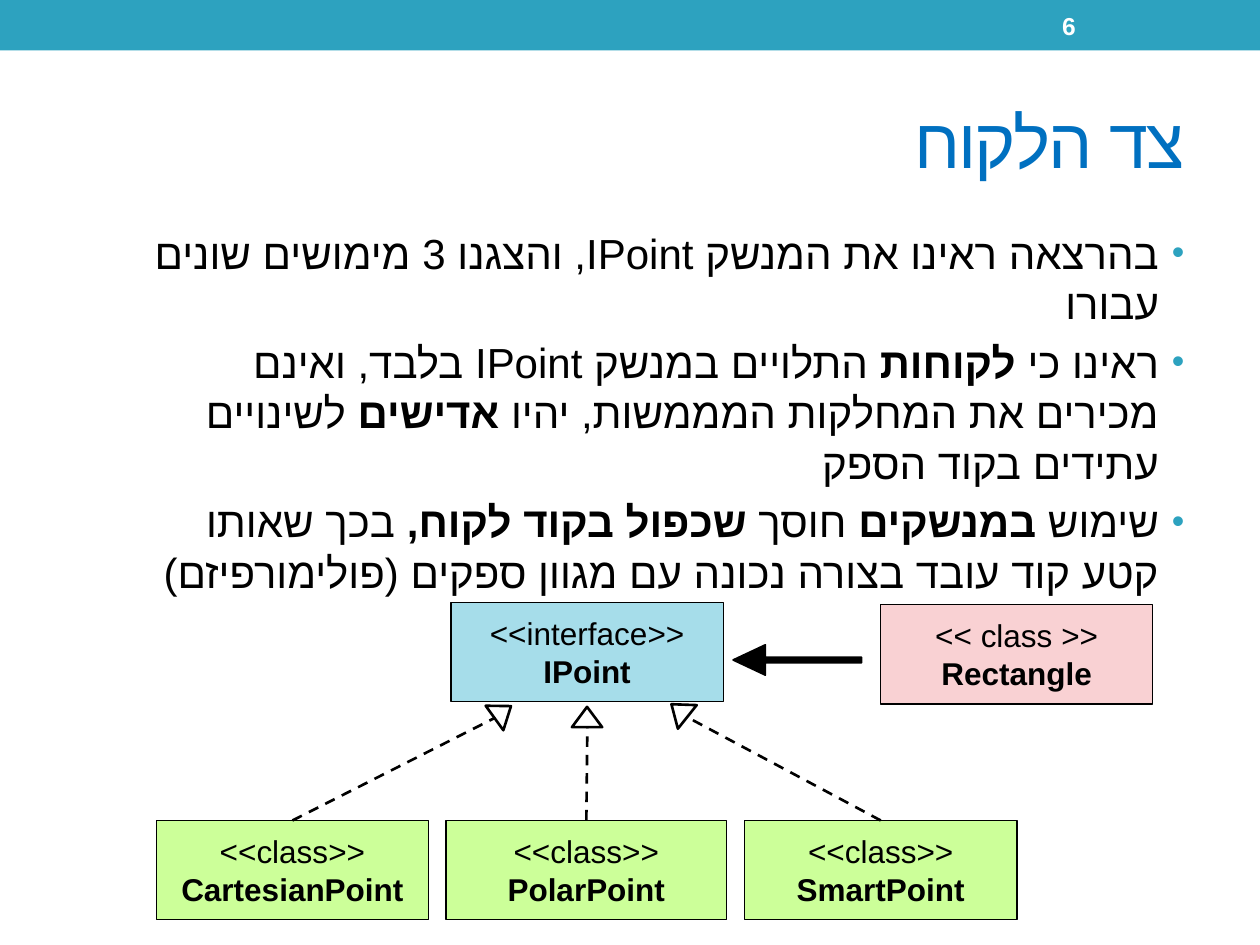
import pptx
import pptx.util
import pptx.dml.color
import pptx.enum.dml
import pptx.enum.shapes
import pptx.enum.text
import pptx.oxml.ns
from lxml import etree

Cm, Pt = pptx.util.Cm, pptx.util.Pt
RGBColor = pptx.dml.color.RGBColor
SHAPE = pptx.enum.shapes.MSO_SHAPE
ALIGN = pptx.enum.text.PP_ALIGN
MIDDLE = pptx.enum.text.MSO_ANCHOR.MIDDLE
qn = pptx.oxml.ns.qn

TEAL = RGBColor(0x2D, 0xA2, 0xBF)
TITLE_BLUE = RGBColor(0x00, 0x70, 0xC0)
INTERFACE_BLUE = RGBColor(0xA6, 0xDD, 0xEA)
CLASS_GREEN = RGBColor(0xCC, 0xFF, 0x99)
CLIENT_PINK = RGBColor(0xF9, 0xD1, 0xD3)
BLACK = RGBColor(0, 0, 0)
WHITE = RGBColor(0xFF, 0xFF, 0xFF)
FONT = "Arial"

# Each point is a list of (text, bold) runs
POINTS = [
    [("בהרצאה ראינו את המנשק IPoint, והצגנו 3 מימושים שונים עבורו", False)],
    [("ראינו כי ", False), ("לקוחות", True),
     (" התלויים במנשק IPoint בלבד, ואינם מכירים את המחלקות המממשות, יהיו ", False),
     ("אדישים", True), (" לשינויים עתידים בקוד הספק", False)],
    [("שימוש ", False), ("במנשקים", True), (" חוסך ", False),
     ("שכפול בקוד לקוח,", True),
     (" בכך שאותו קטע קוד עובד בצורה נכונה עם מגוון ספקים (פולימורפיזם)", False)],
]

# Name, left, width, tip of its dashed line, triangle corner, triangle turn
IMPLEMENTATIONS = [
    ("CartesianPoint", 0, 5.49, (6.81, 2.34), (6.68, 2.01), 54.2),
    ("PolarPoint", 5.84, 5.66, (8.69, 2.52), (8.38, 2.11), 0),
    ("SmartPoint", 11.86, 5.49, (10.69, 2.31), (10.24, 1.98), 308.6),
]
BOX_WIDTH, BOX_HEIGHT, CLASS_TOP = 5.49, 2.0, 4.4


def set_format(target, values):
    for name, value in values.items():
        setattr(target, name, value)


def place(target, left, top, width, height):
    set_format(target, {"left": Cm(left), "top": Cm(top),
                        "width": Cm(width), "height": Cm(height)})


def write_rtl(paragraph, runs, size, color, align):
    paragraph.alignment = align
    paragraph._p.get_or_add_pPr().set("rtl", "1")
    for text, bold in runs:
        run = paragraph.add_run()
        run.text = text
        set_format(run.font, {"name": FONT, "size": Pt(size), "bold": bold})
        run.font.color.rgb = color
        etree.SubElement(run._r.get_or_add_rPr(), qn("a:cs"), typeface=FONT)


def add_plain_shape(slide, kind, left, top, width, height, fill, line_width):
    shape = slide.shapes.add_shape(kind, Cm(left), Cm(top), Cm(width), Cm(height))
    shape.shadow.inherit = False
    if fill is None:
        shape.fill.background()
    else:
        shape.fill.solid()
        shape.fill.fore_color.rgb = fill
    if line_width:
        shape.line.color.rgb = BLACK
        shape.line.width = Pt(line_width)
    else:
        shape.line.fill.background()
    return shape


def add_header(slide, left, top, width, height):
    add_plain_shape(slide, SHAPE.RECTANGLE, left, top, width, height, TEAL, 0)
    number = slide.shapes.add_textbox(Cm(left + 21.16), Cm(top + 0.05),
                                      Cm(2.97), Cm(height - 0.1))
    set_format(number.text_frame, {"word_wrap": True, "vertical_anchor": MIDDLE})
    write_rtl(number.text_frame.paragraphs[0], [("6", True)], 14, WHITE, ALIGN.LEFT)


def add_title(slide, left, top, width, height):
    title = slide.shapes.title
    place(title, left, top, width, height)
    title.text_frame.vertical_anchor = MIDDLE
    paragraph = title.text_frame.paragraphs[0]
    write_rtl(paragraph, [("צד הלקוח", False)], 40, TITLE_BLUE, ALIGN.RIGHT)
    paragraph.runs[0]._r.get_or_add_rPr().set("spc", "-100")


def add_points(slide, left, top, width, height):
    body = slide.placeholders[1]
    place(body, left, top, width, height)
    frame = body.text_frame
    frame.auto_size = pptx.enum.text.MSO_AUTO_SIZE.NONE
    for index, runs in enumerate(POINTS):
        paragraph = frame.add_paragraph() if index else frame.paragraphs[0]
        write_rtl(paragraph, runs, 24, BLACK, ALIGN.RIGHT)
        # Hanging indent and teal bullet
        properties = paragraph._p.get_or_add_pPr()
        properties.set("marR", "0")
        properties.set("marL", str(Cm(0.51)))
        properties.set("indent", str(Cm(-0.51)))
        bullet_color = etree.SubElement(properties, qn("a:buClr"))
        etree.SubElement(bullet_color, qn("a:srgbClr"), val=str(TEAL))
        etree.SubElement(properties, qn("a:buSzPct"), val="85000")
        etree.SubElement(properties, qn("a:buFont"), typeface=FONT)
        etree.SubElement(properties, qn("a:buChar"), char="•")


def add_type_box(slide, left, top, width, stereotype, name, fill):
    box = add_plain_shape(slide, SHAPE.FLOWCHART_PROCESS, left, top,
                          width, BOX_HEIGHT, fill, 0.75)
    frame = box.text_frame
    set_format(frame, {"word_wrap": False, "vertical_anchor": MIDDLE})
    write_rtl(frame.paragraphs[0], [(stereotype, False)], 18, BLACK, ALIGN.CENTER)
    write_rtl(frame.add_paragraph(), [(name, True)], 18, BLACK, ALIGN.CENTER)


def add_dashed_line(slide, start, end):
    line = slide.shapes.add_connector(pptx.enum.shapes.MSO_CONNECTOR.STRAIGHT,
                                      *map(Cm, start + end))
    set_format(line.line, {"width": Pt(1.5),
                           "dash_style": pptx.enum.dml.MSO_LINE.DASH})
    line.line.color.rgb = BLACK
    etree.SubElement(line._element.spPr, qn("a:effectLst"))


def add_diagram(slide, left, top):
    # Interface and its client
    add_type_box(slide, left + 5.94, top, BOX_WIDTH,
                 "<<interface>>", "IPoint", INTERFACE_BLUE)
    add_type_box(slide, left + 14.6, top + 0.05, BOX_WIDTH,
                 "<< class >>", "Rectangle", CLIENT_PINK)
    usage = add_plain_shape(slide, SHAPE.LEFT_ARROW, left + 11.63, top + 0.86,
                            2.59, 0.61, BLACK, 1)
    usage.adjustments[0], usage.adjustments[1] = 0.178, 1.065

    # Implementing classes with their realization arrows
    for name, offset, width, tip, corner, turn in IMPLEMENTATIONS:
        add_type_box(slide, left + offset, top + CLASS_TOP, width,
                     "<<class>>", name, CLASS_GREEN)
        add_dashed_line(slide, (left + offset + width / 2, top + CLASS_TOP),
                        (left + tip[0], top + tip[1]))
        triangle = add_plain_shape(slide, SHAPE.FLOWCHART_EXTRACT, left + corner[0],
                                   top + corner[1], 0.61, 0.41, None, 1.5)
        triangle.rotation = turn


def main():
    presentation = pptx.Presentation()
    set_format(presentation, {"slide_width": Cm(25.4), "slide_height": Cm(19.05)})
    slide = presentation.slides.add_slide(presentation.slide_layouts[1])
    add_header(slide, 0, 0, 25.4, 1.02)
    add_title(slide, 1.27, 1.47, 22.86, 2.74)
    add_points(slide, 2.16, 4.45, 21.97, 12.57)
    add_diagram(slide, 3.15, 12.14)
    presentation.save("out.pptx")


if __name__ == "__main__":
    main()
